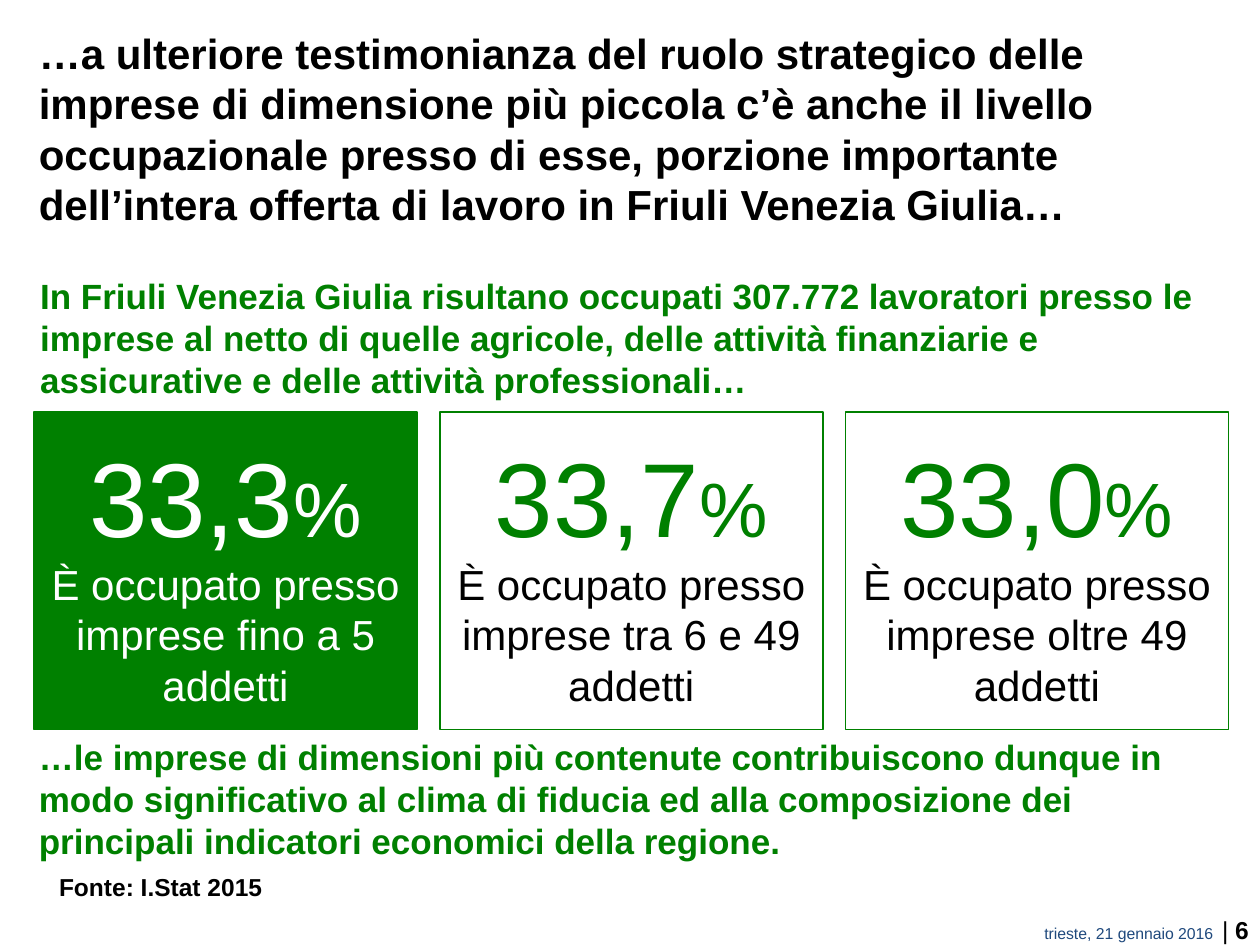
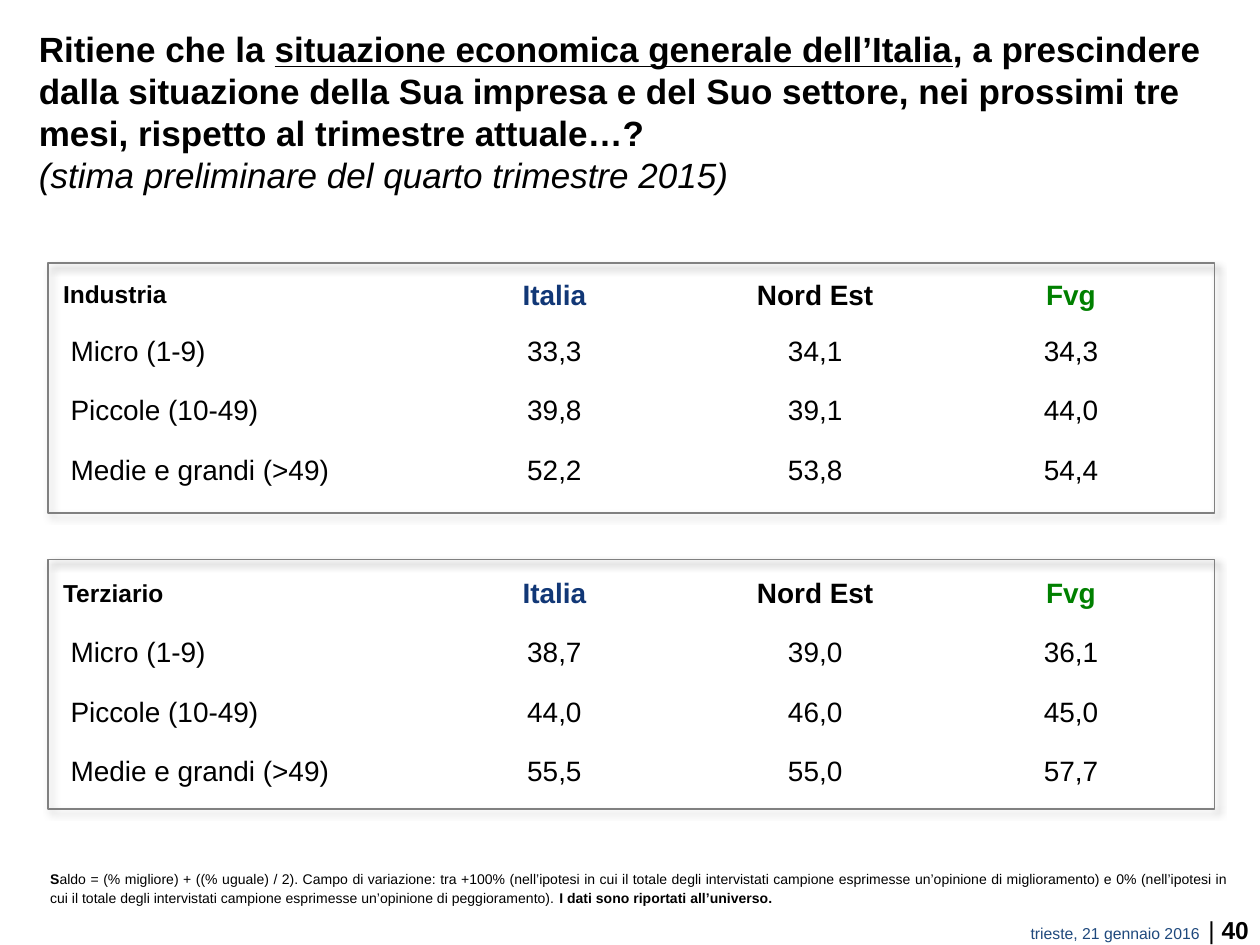
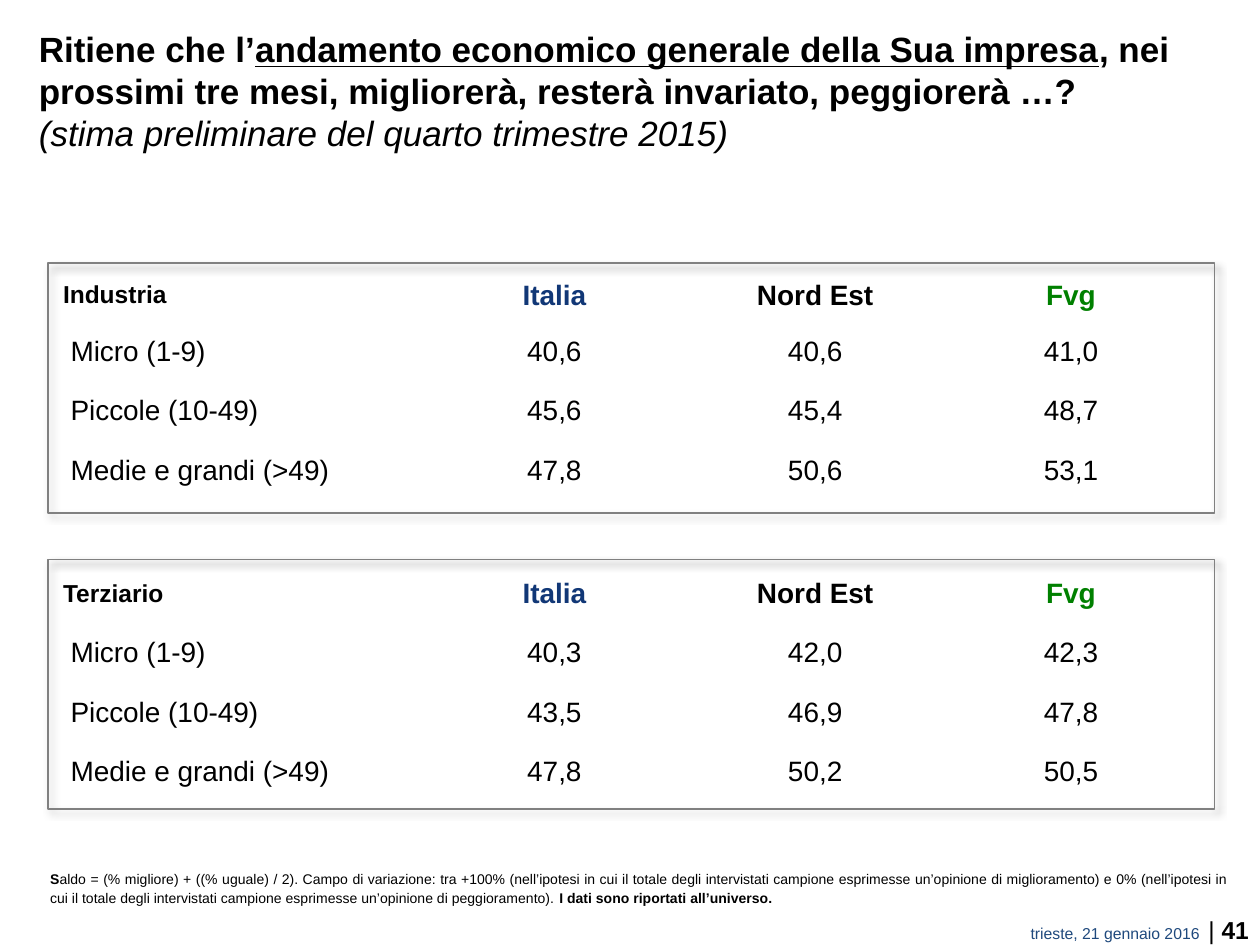
from pptx import Presentation
from pptx.dml.color import RGBColor
from pptx.enum.shapes import MSO_SHAPE as Shape
from pptx.enum.text import MSO_ANCHOR as Anchor, PP_ALIGN as Align
from pptx.oxml import parse_xml
from pptx.oxml.ns import nsdecls
from pptx.util import Inches, Pt

BLACK = RGBColor(0x00, 0x00, 0x00)
WHITE = RGBColor(0xFF, 0xFF, 0xFF)
GREEN = RGBColor(0x00, 0x80, 0x00)
NAVY = RGBColor(0x11, 0x37, 0x76)
FOOTER_BLUE = RGBColor(0x1F, 0x49, 0x7D)
GREY = RGBColor(0x80, 0x80, 0x80)

NO_GRID_STYLE = "{2D5ABB26-0587-4C30-8999-92F81FD0307C}"
SHADOW = (
    f'<a:effectLst {nsdecls("a")}>'
    '<a:outerShdw blurRad="50800" dist="38100" dir="2700000" algn="tl" rotWithShape="0">'
    '<a:srgbClr val="000000"><a:alpha val="40000"/></a:srgbClr>'
    "</a:outerShdw></a:effectLst>"
)

BOLD = {"bold": True}
UNDERLINED = {"bold": True, "underline": True}
ITALIC = {"italic": True}
LEAD = {"size": Pt(20), "bold": True, "color": GREEN}

DATE = "trieste, 21 gennaio 2016  "
ESTIMATE = "(stima preliminare del quarto trimestre 2015)"
BALANCE_NOTE = [
    ("S", BOLD),
    ("aldo = (% migliore) + ((% uguale) / 2). Campo di variazione: tra +100% "
     "(nell’ipotesi in cui il totale degli intervistati campione esprimesse un’opinione "
     "di miglioramento) e 0% (nell’ipotesi in cui il totale degli intervistati campione "
     "esprimesse un’opinione di peggioramento). ", {}),
    ("I dati sono riportati all’universo.", BOLD),
]

AREAS = [("Italia", NAVY), ("Nord Est", BLACK), ("Fvg", GREEN)]
SIZES = ["Micro (1-9)", "Piccole (10-49)", "Medie e grandi (>49)"]
COLUMN_WIDTHS = [2.96, 2.08, 2.06, 2.0]
ROW_HEIGHT = 0.47
SECTORS = [("Industria", 2.09, 0.43), ("Terziario", 4.44, 0.47)]

CARDS = [
    ("33,3", "È occupato presso imprese fino a 5 addetti", True),
    ("33,7", "È occupato presso imprese tra 6 e 49 addetti", False),
    ("33,0", "È occupato presso imprese oltre 49 addetti", False),
]

SURVEYS = [
    (40,
     [("Ritiene che la ", BOLD),
      ("situazione economica generale dell’Italia", UNDERLINED),
      (", a prescindere dalla situazione della Sua impresa e del Suo settore, "
       "nei prossimi tre mesi, rispetto al trimestre attuale…?", BOLD)],
     [[("33,3", "34,1", "34,3"), ("39,8", "39,1", "44,0"), ("52,2", "53,8", "54,4")],
      [("38,7", "39,0", "36,1"), ("44,0", "46,0", "45,0"), ("55,5", "55,0", "57,7")]]),
    (41,
     [("Ritiene che l’", BOLD),
      ("andamento economico generale della Sua impresa", UNDERLINED),
      (", nei prossimi tre mesi, migliorerà, resterà invariato, peggiorerà …?", BOLD)],
     [[("40,6", "40,6", "41,0"), ("45,6", "45,4", "48,7"), ("47,8", "50,6", "53,1")],
      [("40,3", "42,0", "42,3"), ("43,5", "46,9", "47,8"), ("47,8", "50,2", "50,5")]]),
]


class SlideMaker:
    """Holds the deck style and the current page, and draws each kind of element."""

    def __init__(self):
        self.deck = Presentation()
        self.deck.slide_width, self.deck.slide_height = Inches(10), Inches(7.5)
        self.style = {"name": "Arial", "size": Pt(16), "color": BLACK}
        self.page = None

    def start_page(self, number):
        self.page = self.deck.slides.add_slide(self.deck.slide_layouts[6])
        footer = [(DATE, {"size": Pt(9), "color": FOOTER_BLUE}), ("| ", {}), (str(number), BOLD)]
        self.text((3.08, 7.21, 6.93, 0.33), footer, {"size": Pt(14)}, Align.RIGHT)

    def add_spans(self, para, spans, base, align=Align.LEFT):
        para.alignment = align
        for text, changes in spans:
            if text == "\n":
                para.add_line_break()
                continue
            span = para.add_run()
            span.text = text
            for name, value in {**self.style, **base, **changes}.items():
                if name == "color":
                    span.font.color.rgb = value
                else:
                    setattr(span.font, name, value)

    def text(self, place, spans, base, align=Align.LEFT):
        box = self.page.shapes.add_textbox(*map(Inches, place))
        box.text_frame.word_wrap = True
        para = box.text_frame.paragraphs[0]
        self.add_spans(para, spans, base, align)
        return para

    def title(self, spans, size):
        self.text((0.21, 0.17, 9.51, 0.84), spans, {"size": Pt(size)})

    def rectangle(self, place, line, fill=None):
        box = self.page.shapes.add_shape(Shape.RECTANGLE, *map(Inches, place))
        box.shadow.inherit = False
        box.line.color.rgb = line
        box.line.width = Pt(1)
        if fill is None:
            box.fill.background()
        else:
            box.fill.solid()
            box.fill.fore_color.rgb = fill
        return box

    def card(self, left, share, caption, filled):
        box = self.rectangle((left, 3.27, 3.04, 2.52), GREEN, GREEN if filled else None)
        frame = box.text_frame
        frame.word_wrap = True
        frame.vertical_anchor = Anchor.MIDDLE
        frame.margin_left = frame.margin_right = Inches(0.05)
        figure = {"size": Pt(60), "color": WHITE if filled else GREEN}
        label = {"size": Pt(24), "color": WHITE if filled else BLACK}
        share_spans = [(share, {}), ("%", {"size": Pt(44)})]
        self.add_spans(frame.paragraphs[0], share_spans, figure, Align.CENTER)
        self.add_spans(frame.add_paragraph(), [(caption, {})], label, Align.CENTER)

    def shadowed_panel(self, top):
        box = self.rectangle((0.38, top, 9.26, 1.98), GREY)
        properties = box._element.spPr
        properties.replace(properties.find("{*}effectLst"), parse_xml(SHADOW))

    def sector_table(self, sector, top, header_height, values):
        self.shadowed_panel(top)
        heights = [header_height] + [ROW_HEIGHT] * len(SIZES)
        place = (0.4, top + 0.04, sum(COLUMN_WIDTHS), sum(heights))
        frame = self.page.shapes.add_table(len(heights), len(COLUMN_WIDTHS), *map(Inches, place))
        frame._element.xpath(".//a:tableStyleId")[0].text = NO_GRID_STYLE
        table = frame.table
        table.first_row = table.horz_banding = False
        for column, width in zip(table.columns, COLUMN_WIDTHS):
            column.width = Inches(width)
        for row, height in zip(table.rows, heights):
            row.height = Inches(height)

        header = [(sector, {"size": Pt(14), "bold": True})]
        header += [(area, {"bold": True, "color": color}) for area, color in AREAS]
        body = [[(text, {}) for text in (size, *row)] for size, row in zip(SIZES, values)]
        for row_index, spans in enumerate([header, *body]):
            for column_index, span in enumerate(spans):
                cell = table.cell(row_index, column_index)
                cell.fill.background()
                cell.vertical_anchor = Anchor.MIDDLE
                if column_index == 0:
                    cell.margin_left = Inches(0.16 if row_index else 0.1)
                align = Align.CENTER if column_index else Align.LEFT
                self.add_spans(cell.text_frame.paragraphs[0], [span], {}, align)


def employment_page(maker):
    maker.start_page(6)
    maker.title([
        ("…a ulteriore testimonianza del ruolo strategico delle imprese di dimensione più "
         "piccola c’è anche il livello occupazionale presso di esse, porzione importante "
         "dell’intera offerta di lavoro in Friuli Venezia Giulia…", BOLD)], 24)
    maker.text((0.22, 2.13, 9.66, 1.11), [
        ("In Friuli Venezia Giulia risultano occupati 307.772 lavoratori presso le imprese "
         "al netto di quelle agricole, delle attività finanziarie e assicurative e delle "
         "attività professionali…", {})], LEAD)
    for index, card in enumerate(CARDS):
        maker.card(0.27 + 3.22 * index, *card)
    maker.text((0.21, 5.79, 9.58, 1.11), [
        ("…le imprese di dimensioni più contenute contribuiscono dunque in modo "
         "significativo al clima di fiducia ed alla composizione dei principali indicatori "
         "economici della regione.", {})], LEAD)
    maker.text((0.37, 6.87, 3.15, 0.34), [("Fonte: I.Stat 2015", BOLD)], {"size": Pt(14)})


def survey_page(maker, number, question, results):
    maker.start_page(number)
    maker.title([*question, ("\n", {}), (ESTIMATE, ITALIC)], 20)
    for sector, values in zip(SECTORS, results):
        maker.sector_table(*sector, values)
    note = maker.text((0.3, 6.85, 9.56, 0.4), BALANCE_NOTE, {"size": Pt(8)}, Align.JUSTIFY)
    note.line_spacing = 1.1


def main():
    maker = SlideMaker()
    employment_page(maker)
    for survey in SURVEYS:
        survey_page(maker, *survey)
    maker.deck.save("out.pptx")


if __name__ == "__main__":
    main()
